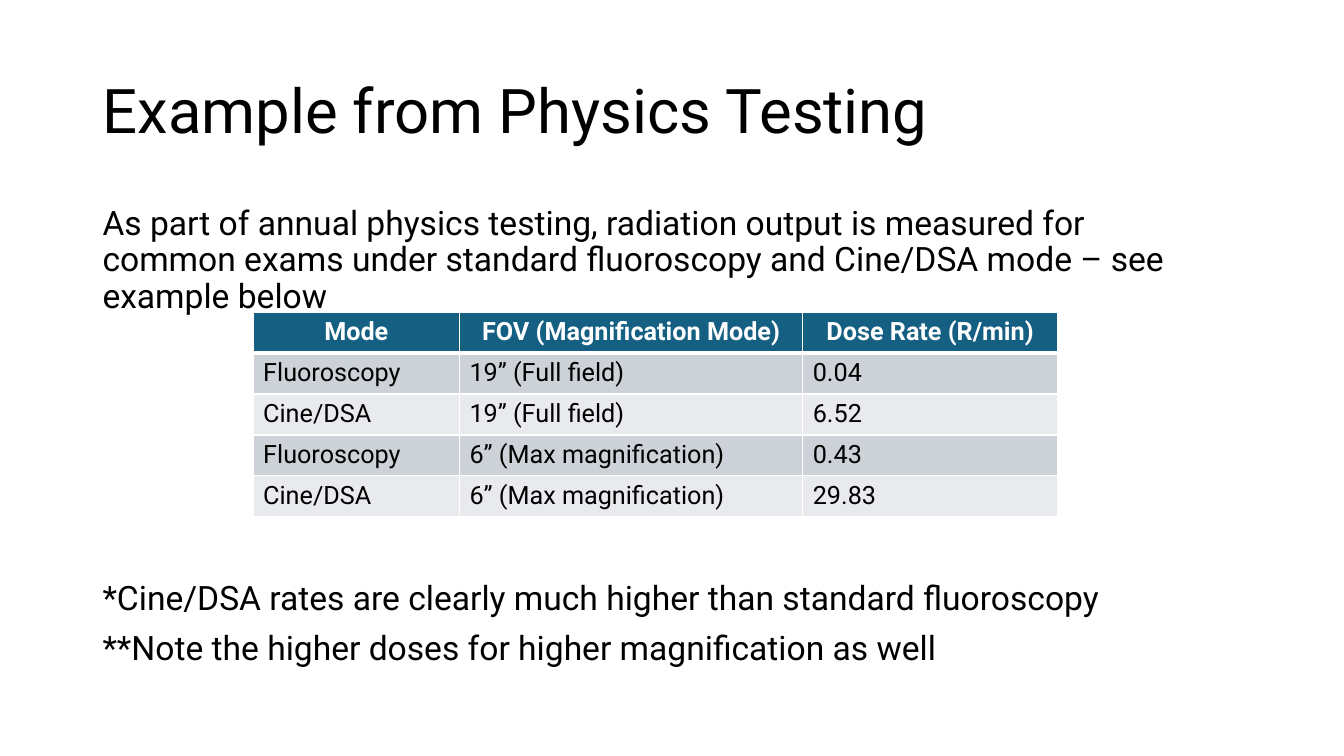
from lxml import etree
from pptx import Presentation
from pptx import util as u
from pptx.dml.color import RGBColor
from pptx.enum import text
from pptx.oxml.ns import qn

COLORS = {
    "text": "000000",
    "white": "FFFFFF",
    "header": "156082",
    "dark_band": "CCD2D8",
    "light_band": "E8EAED",
}
INTRO = ("As part of annual physics testing, radiation output is measured for "
         "common exams under standard fluoroscopy and Cine/DSA mode – see example below")
NOTES = ["*Cine/DSA rates are clearly much higher than standard fluoroscopy",
         "**Note the higher doses for higher magnification as well"]
DOSE_RATES = [
    ["Mode", "FOV (Magnification Mode)", "Dose Rate (R/min)"],
    ["Fluoroscopy", "19” (Full field)", "0.04"],
    ["Cine/DSA", "19” (Full field)", "6.52"],
    ["Fluoroscopy", "6” (Max magnification)", "0.43"],
    ["Cine/DSA", "6” (Max magnification)", "29.83"],
]


class SlideBuilder:
    font_name = "Roboto"

    def __init__(self, slide):
        self.slide = slide

    def color(self, name):
        return RGBColor.from_string(COLORS[name])

    def place(self, shape, left, top, width, height):
        shape.left, shape.top = u.Cm(left), u.Cm(top)
        shape.width, shape.height = u.Cm(width), u.Cm(height)

    def style(self, paragraph, size, align=text.PP_ALIGN.LEFT, color="text", bold=False):
        paragraph.alignment = align
        font = paragraph.font
        font.name, font.size, font.bold = self.font_name, u.Pt(size), bold
        font.color.rgb = self.color(color)

    def title(self, wording, box):
        shape = self.slide.shapes.title
        self.place(shape, *box)
        frame = shape.text_frame
        frame.text = wording
        frame.auto_size = text.MSO_AUTO_SIZE.NONE
        frame.vertical_anchor = text.MSO_ANCHOR.MIDDLE
        paragraph = frame.paragraphs[0]
        paragraph.line_spacing = 0.9
        self.style(paragraph, 44)

    def body(self, items, box):
        """Fill the body with (wording, space before in points) pairs."""
        shape = self.slide.placeholders[1]
        self.place(shape, *box)
        frame = shape.text_frame
        frame.text = "\n".join(wording for wording, _ in items)
        frame.auto_size = text.MSO_AUTO_SIZE.NONE
        for paragraph, (_, space_before) in zip(frame.paragraphs, items):
            paragraph.line_spacing = 0.9
            paragraph.space_before = u.Pt(space_before)
            self.style(paragraph, 24)
            properties = paragraph._p.get_or_add_pPr()
            properties.set("marL", "0")
            properties.set("indent", "0")
            bullet = etree.Element(qn("a:buNone"))
            properties.find(qn("a:spcBef")).addnext(bullet)

    def border(self, cell, side, points):
        line = etree.SubElement(cell._tc.get_or_add_tcPr(), qn(f"a:ln{side}"),
                                w=str(u.Pt(points)))
        fill = etree.SubElement(line, qn("a:solidFill"))
        etree.SubElement(fill, qn("a:srgbClr"), val=COLORS["white"])

    def table(self, rows, left, top, column_widths, row_height):
        frame = self.slide.shapes.add_table(
            len(rows), len(column_widths), u.Cm(left), u.Cm(top),
            u.Cm(sum(column_widths)), u.Cm(row_height * len(rows)))
        table = frame.table
        for column, width in zip(table.columns, column_widths):
            column.width = u.Cm(width)
        for row_index, values in enumerate(rows):
            table.rows[row_index].height = u.Cm(row_height)
            for column_index, value in enumerate(values):
                self.cell(table.cell(row_index, column_index), value, row_index)

    def cell(self, cell, value, row_index):
        is_header = row_index == 0
        cell.text = value
        paragraph = cell.text_frame.paragraphs[0]
        if is_header:
            self.style(paragraph, 18, text.PP_ALIGN.CENTER, "white", True)
            band = "header"
        else:
            self.style(paragraph, 18)
            band = "dark_band" if row_index % 2 else "light_band"
        # A heavier rule separates the header from the values
        widths = {"L": 1, "R": 1, "T": 3 if row_index == 1 else 1, "B": 3 if is_header else 1}
        for side, points in widths.items():
            self.border(cell, side, points)
        cell.fill.solid()
        cell.fill.fore_color.rgb = self.color(band)


def main():
    presentation = Presentation()
    presentation.slide_width, presentation.slide_height = u.Cm(33.87), u.Cm(19.05)
    builder = SlideBuilder(presentation.slides.add_slide(presentation.slide_layouts[1]))

    # Title
    builder.title("Example from Physics Testing", (2.33, 1.01, 29.21, 3.68))

    # Introduction above the table, notes below it
    builder.body([(INTRO, 10), (NOTES[0], 190), (NOTES[1], 10)], (2.33, 5.08, 28.68, 12.09))

    # Measured dose rates
    builder.table(DOSE_RATES, 6.38, 7.87, [5.2, 8.65, 6.42], 1.03)

    presentation.save("out.pptx")


if __name__ == "__main__":
    main()
